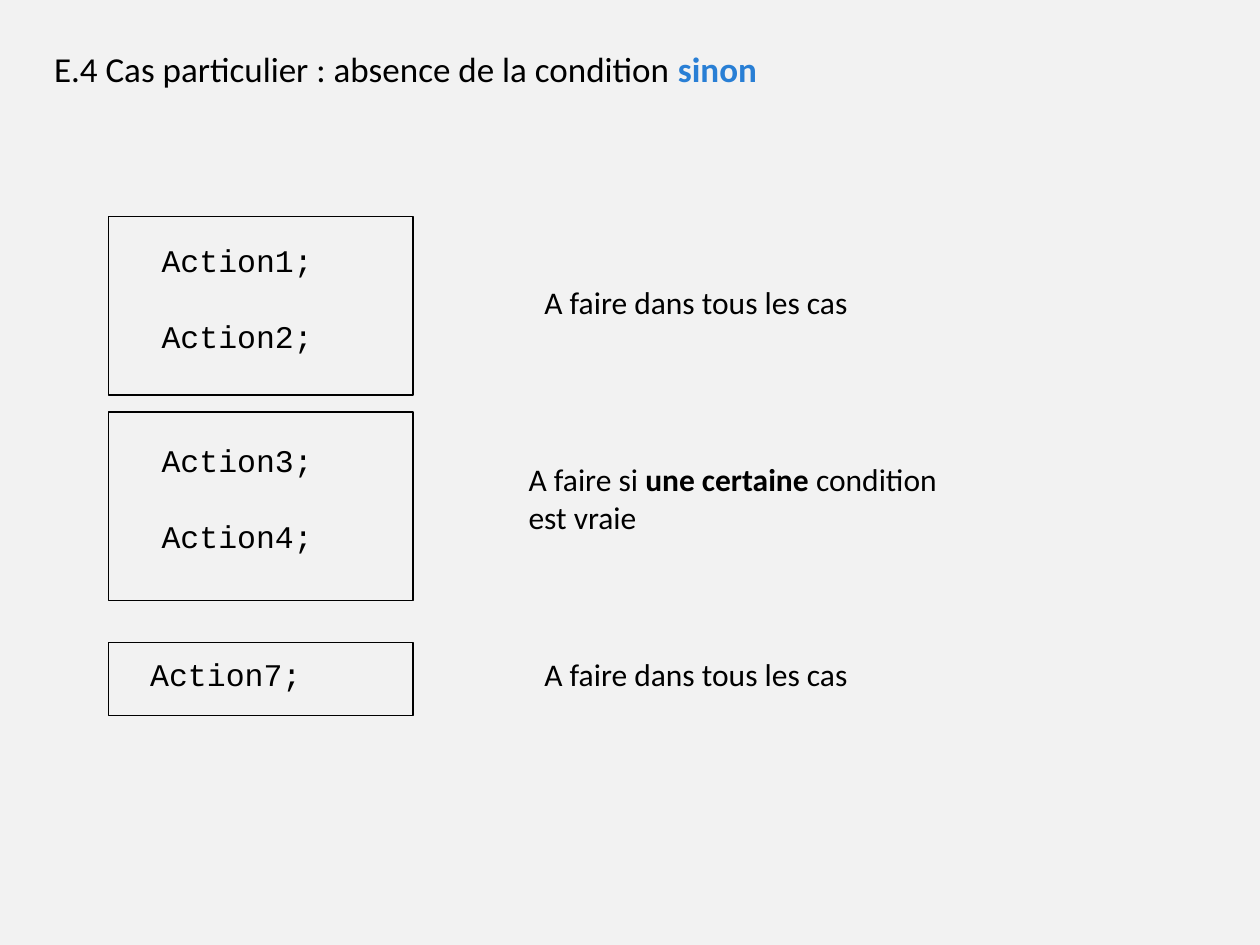
"""Slide on the special case of a condition without its else branch."""
from pptx import Presentation
from pptx.dml.color import RGBColor
from pptx.enum.shapes import MSO_SHAPE
from pptx.enum.text import MSO_AUTO_SIZE, PP_ALIGN
from pptx.util import Pt

RECT = MSO_SHAPE.RECTANGLE
GROW = MSO_AUTO_SIZE.SHAPE_TO_FIT_TEXT
LEFT, CENTER = PP_ALIGN.LEFT, PP_ALIGN.CENTER
COLORS = {"background": "F2F2F2", "text": "000000", "keyword": "297FD5"}
BODY, CODE = "Calibri", "Courier New"


def rgb(name):
    return RGBColor.from_string(COLORS[name])


def add_text(shapes, box, paragraphs, font=BODY, size=18, align=LEFT, gap=0, wrap=False):
    tf = shapes.add_textbox(*map(Pt, box)).text_frame
    tf.word_wrap = wrap
    tf.auto_size = GROW
    for i, runs in enumerate(paragraphs):
        p = tf.add_paragraph() if i else tf.paragraphs[0]
        p.alignment = align
        if i:
            p.space_before = Pt(gap)
        for text, bold, color in runs:
            r = p.add_run()
            r.text = text
            for name, value in {"name": font, "size": Pt(size), "bold": bold}.items():
                setattr(r.font, name, value)
            r.font.color.rgb = rgb(color)
    return tf


prs = Presentation()
prs.slide_width, prs.slide_height = Pt(720), Pt(540)
s = prs.slides.add_slide(prs.slide_layouts[6])
s.background.fill.solid()
s.background.fill.fore_color.rgb = rgb("background")

title = [("E.4 Cas particulier : absence de la condition ", False, "text"),
         ("sinon", True, "keyword")]
tf = add_text(s.shapes, (23.8, 23.8, 488, 31), [title], size=20, wrap=True)
tf.paragraphs[0].space_before = Pt(10)

always = [[("A faire dans tous les cas", False, "text")]]
conditional = [
    [("A faire si ", False, "text"), ("une certaine", True, "text"),
     (" condition", False, "text")],
    [("est vraie", False, "text")],
]
steps = [
    ((123.6, 102.2), (304, 158.4, 190, 29), always,
     (85, 134, 101, 72), ["Action1;", "Action2;"]),
    ((235.4, 108), (295, 259.4, 277, 50.5), conditional,
     (85, 248.4, 101, 72), ["Action3;", "Action4;"]),
    ((367.2, 41.8), (304, 371, 190, 29), always,
     (78.5, 371, 101, 29), ["Action7;"]),
]
for (top, height), note_box, note, code_box, actions in steps:
    group = s.shapes.add_group_shape()
    sp = group.shapes.add_shape(RECT, Pt(62), Pt(top), Pt(174), Pt(height))
    sp.shadow.inherit = False
    sp.fill.background()
    sp.line.color.rgb = rgb("text")
    sp.line.width = Pt(0.75)
    add_text(group.shapes, note_box, note)
    code = [[(action, False, "text")] for action in actions]
    add_text(s.shapes, code_box, code, font=CODE, align=CENTER, gap=22)

prs.save("out.pptx")
